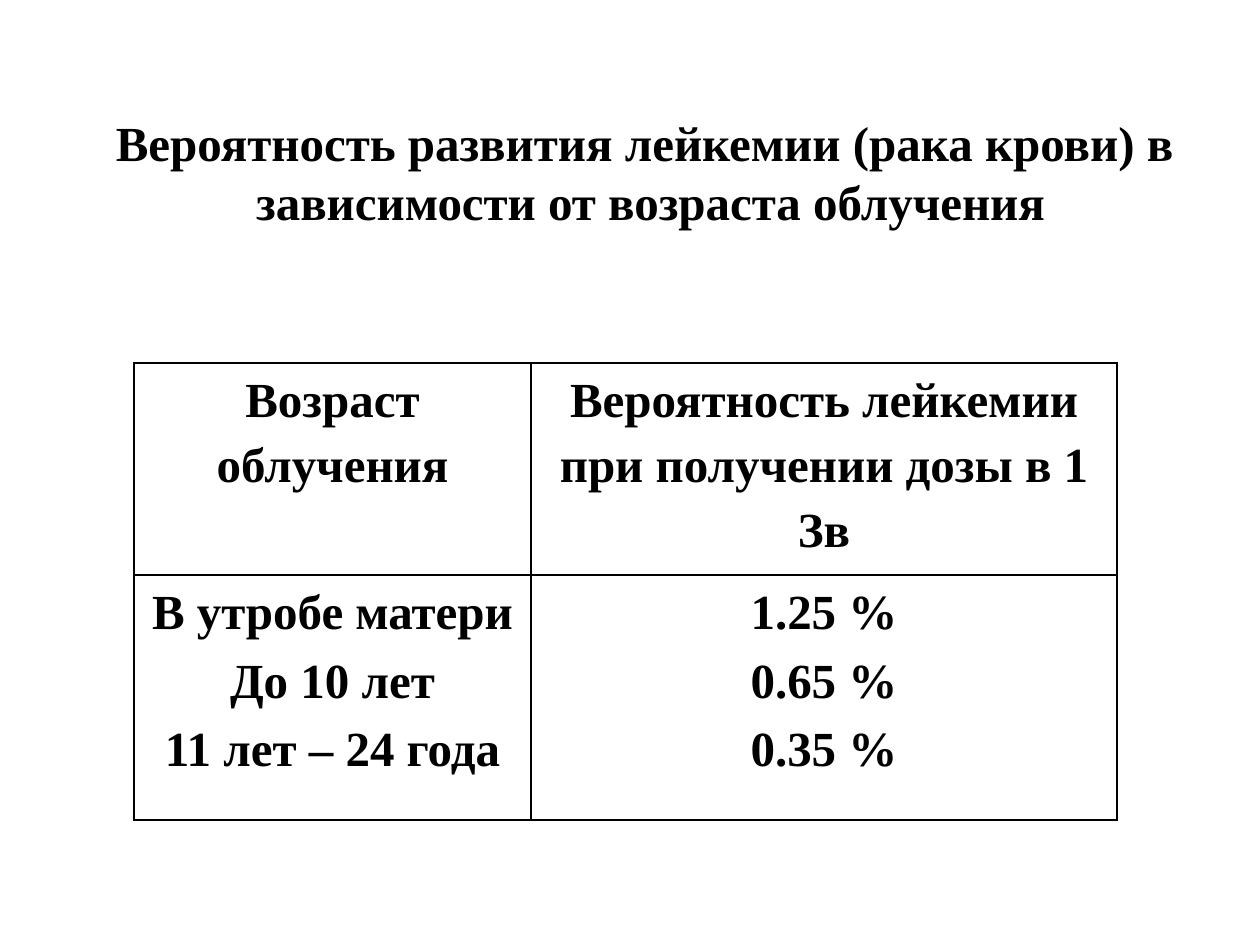
from dataclasses import dataclass

from lxml import etree
from pptx import Presentation
from pptx.dml.color import RGBColor
from pptx.enum.text import MSO_ANCHOR, PP_ALIGN
from pptx.oxml.ns import qn
from pptx.util import Emu, Pt

CENTER = PP_ALIGN.CENTER
MIDDLE = MSO_ANCHOR.MIDDLE
TOP = MSO_ANCHOR.TOP
PX_PER_INCH = 126
FONT = "Times New Roman"
BLACK = "000000"
TITLE = (
    "Вероятность развития лейкемии (рака крови) в\n"
    " зависимости от возраста облучения"
)
COLUMN_WIDTHS = (397, 586)


@dataclass(frozen=True)
class Row:
    height: int
    space_before: int
    texts: tuple[str, ...]


ROWS = (
    Row(212, 1, (
        "Возраст облучения",
        "Вероятность лейкемии при получении дозы в 1 Зв",
    )),
    Row(245, 2, (
        "В утробе матери\nДо 10 лет\n11 лет – 24 года",
        "1.25 %\n0.65 %\n0.35 %",
    )),
)


def px(n: int) -> Emu:
    return Emu(round(n * 914400 / PX_PER_INCH))


def color(value: str) -> RGBColor:
    return RGBColor.from_string(value)


def set_text(tf, text: str, line_spacing: float = 1.0, space_before: int = 0) -> None:
    tf.text = text
    for p in tf.paragraphs:
        p.alignment = CENTER
        p.line_spacing = line_spacing
        p.space_before = Pt(space_before)
        for r in p.runs:
            r.font.name = FONT
            r.font.size = Pt(28)
            r.font.bold = True
            r.font.color.rgb = color(BLACK)


def set_borders(cell) -> None:
    tc_pr = cell._tc.get_or_add_tcPr()
    for i, side in enumerate(("lnL", "lnR", "lnT", "lnB")):
        ln = etree.Element(qn(f"a:{side}"), w=str(Pt(1)))
        fill = etree.SubElement(ln, qn("a:solidFill"))
        etree.SubElement(fill, qn("a:srgbClr"), val=BLACK)
        tc_pr.insert(i, ln)


def add_title(s) -> None:
    sp = s.shapes.add_textbox(px(97), px(106), px(1095), px(131))
    tf = sp.text_frame
    tf.word_wrap = False
    tf.vertical_anchor = MIDDLE
    set_text(tf, TITLE)


def add_risk_table(s) -> None:
    height = sum(row.height for row in ROWS)
    frame = s.shapes.add_table(
        len(ROWS), len(COLUMN_WIDTHS),
        px(134), px(363), px(sum(COLUMN_WIDTHS)), px(height),
    )
    table = frame.table
    table.first_row = False
    table.horz_banding = False
    for column, width in zip(table.columns, COLUMN_WIDTHS):
        column.width = px(width)
    for table_row, row in zip(table.rows, ROWS):
        table_row.height = px(row.height)
        for cell, text in zip(table_row.cells, row.texts):
            cell.margin_left = cell.margin_right = px(4)
            cell.margin_top = cell.margin_bottom = px(0)
            cell.vertical_anchor = TOP
            cell.fill.background()
            set_borders(cell)
            set_text(cell.text_frame, text, 1.2, row.space_before)


def main() -> None:
    prs = Presentation()
    prs.slide_width = px(1260)
    prs.slide_height = px(945)
    s = prs.slides.add_slide(prs.slide_layouts[6])
    add_title(s)
    add_risk_table(s)
    prs.save("out.pptx")


if __name__ == "__main__":
    main()
